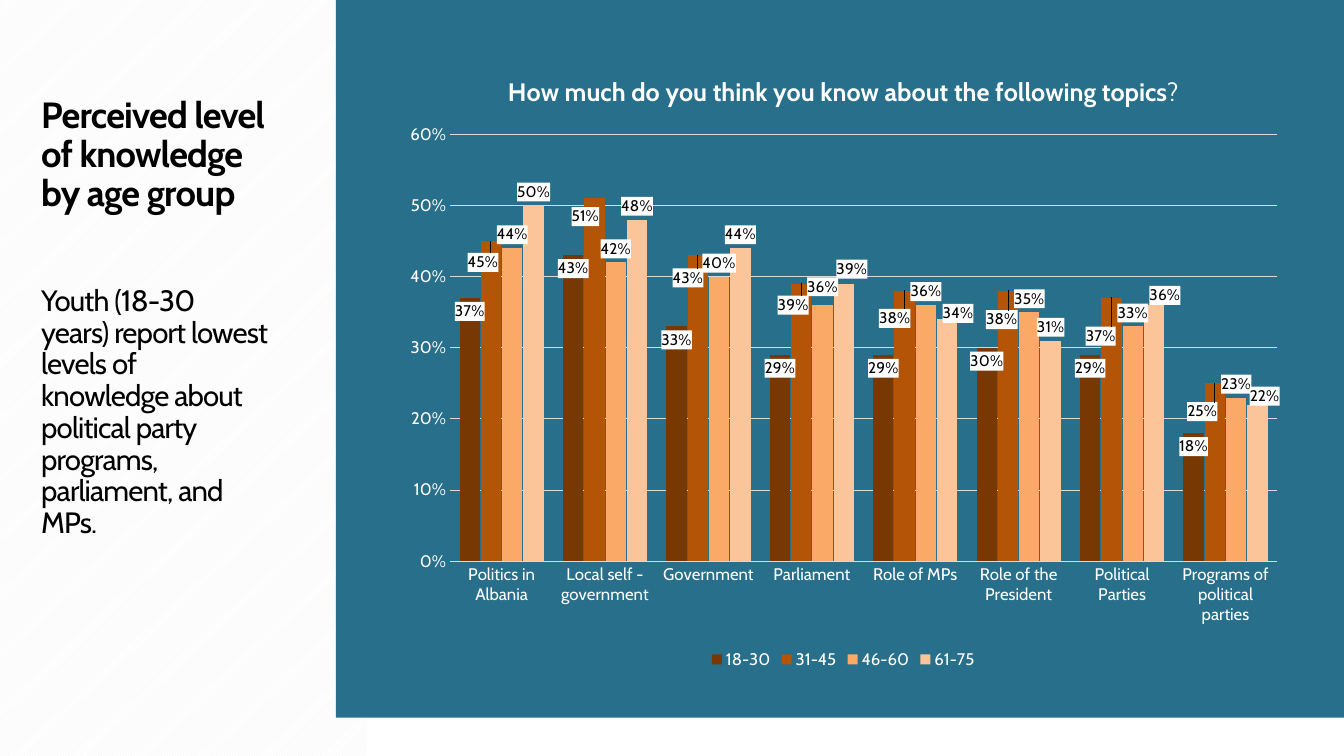
from copy import deepcopy
from dataclasses import dataclass, field

from lxml.etree import SubElement
from pptx import Presentation
from pptx.chart.chart import Chart
from pptx.chart.data import CategoryChartData
from pptx.chart.series import BarSeries
from pptx.dml.color import RGBColor
from pptx.enum.chart import XL_CHART_TYPE as ChartType
from pptx.enum.chart import XL_LABEL_POSITION as LabelPosition
from pptx.enum.chart import XL_LEGEND_POSITION as LegendPosition
from pptx.enum.chart import XL_TICK_MARK as TickMark
from pptx.enum.dml import MSO_PATTERN as Pattern
from pptx.enum.shapes import MSO_SHAPE as ShapeKind
from pptx.enum.text import MSO_ANCHOR as Anchor
from pptx.oxml import parse_xml
from pptx.oxml.ns import nsdecls, qn
from pptx.util import Inches, Pt

WIDTH, HEIGHT = Inches(13.33), Inches(7.5)
FONT = "Cabin"
BLACK = RGBColor(0x00, 0x00, 0x00)
WHITE = RGBColor(0xFF, 0xFF, 0xFF)
STRIPE = RGBColor(0xF2, 0xF2, 0xF2)
TEAL = RGBColor(0x27, 0x6F, 0x8B)
GRID = RGBColor(0xD9, 0xD9, 0xD9)
BROWN = RGBColor(0x77, 0x38, 0x04)
RUST = RGBColor(0xB3, 0x54, 0x06)
ORANGE = RGBColor(0xFA, 0xA9, 0x66)
PEACH = RGBColor(0xFC, 0xC5, 0x99)


@dataclass(frozen=True)
class Frame:
    """Position and size in percent of the slide."""
    left: float
    top: float
    width: float
    height: float

    def place(self) -> tuple[int, int, int, int]:
        return (int(WIDTH * self.left / 100), int(HEIGHT * self.top / 100),
                int(WIDTH * self.width / 100), int(HEIGHT * self.height / 100))


@dataclass(frozen=True)
class AgeGroup:
    """Values and label shifts in percent, shifts being shares of the chart."""
    name: str
    values: tuple[int, ...]
    color: RGBColor
    position: LabelPosition
    shifts: dict[int, tuple[float, float]] = field(default_factory=dict)


@dataclass(frozen=True)
class Passage:
    text: str
    size: int
    bold: bool
    before: int


STRIPES = Frame(-14.48, 25.73, 56.25, 48.53)
PANEL = Frame(25, 0, 75, 94.93)
SIDEBAR = Frame(2.33, 12.13, 18.3, 70.13)
CHART = Frame(29.18, 7.2, 67.13, 81.87)
PLOT = {"x": 0.064, "y": 0.129, "w": 0.917, "h": 0.69}

PASSAGES = (
    Passage("Perceived level of knowledge by age group", 26, True, 0),
    Passage("Youth (18-30 years) report lowest levels of knowledge about "
            "political party programs, parliament, and MPs.", 21, False, 51),
)
TOPICS = ("Politics in Albania", "Local self - government", "Government",
          "Parliament", "Role of MPs", "Role of the President",
          "Political Parties", "Programs of political parties")
AGE_GROUPS = (
    AgeGroup("18-30", (37, 43, 33, 29, 29, 30, 29, 18), BROWN,
             LabelPosition.INSIDE_END),
    AgeGroup("31-45", (45, 51, 43, 39, 38, 38, 37, 25), RUST,
             LabelPosition.INSIDE_END,
             {0: (-0.9, 1.3), 1: (-1, 0.8), 2: (-1.1, 1.5), 3: (-0.9, 1.3),
              4: (-1.1, 2.3), 5: (-0.7, 2.5), 6: (-1.2, 4), 7: (-1.4, 2.4)}),
    AgeGroup("46-60", (44, 42, 40, 36, 36, 35, 33, 23), ORANGE,
             LabelPosition.OUTSIDE_END, {3: (0, -0.8)}),
    AgeGroup("61-75", (50, 48, 44, 39, 34, 31, 36, 22), PEACH,
             LabelPosition.OUTSIDE_END,
             {3: (0.9, -0.2), 4: (1.2, 1.2), 6: (1.2, 0.6), 7: (0.8, 0.8)}),
)


def style(font, size: int, color: RGBColor, bold: bool = False) -> None:
    font.name, font.size, font.bold = FONT, Pt(size), bold
    font.color.rgb = color


def add_block(page, frame: Frame):
    block = page.shapes.add_shape(ShapeKind.RECTANGLE, *frame.place())
    block.shadow.inherit = False
    block.line.fill.background()
    return block


def add_backdrop(page) -> None:
    stripes = add_block(page, STRIPES)
    stripes.rotation = 270
    stripes.fill.patterned()
    stripes.fill.pattern = Pattern.DARK_UPWARD_DIAGONAL
    stripes.fill.fore_color.rgb = STRIPE
    stripes.fill.back_color.rgb = WHITE
    panel = add_block(page, PANEL)
    panel.fill.solid()
    panel.fill.fore_color.rgb = TEAL


def add_sidebar(page) -> None:
    frame = page.shapes.add_textbox(*SIDEBAR.place()).text_frame
    frame.word_wrap = True
    frame.vertical_anchor = Anchor.TOP
    for index, passage in enumerate(PASSAGES):
        para = frame.add_paragraph() if index else frame.paragraphs[0]
        para.text = passage.text
        para.line_spacing = 0.9
        para.space_before = Pt(passage.before)
        style(para.font, passage.size, BLACK, passage.bold)
        para._p.pPr.find(qn("a:defRPr")).set("spc", "-60")


def make_layout(**settings: object):
    layout = parse_xml(f"<c:layout {nsdecls('c')}><c:manualLayout/></c:layout>")
    for name, value in settings.items():
        SubElement(layout[0], qn(f"c:{name}")).set("val", str(value))
    return layout


def label_series(series: BarSeries, group: AgeGroup) -> None:
    labels = series.data_labels
    labels.show_value = True
    labels.number_format, labels.number_format_is_linked = "0%", False
    labels.position = group.position
    style(labels.font, 11, BLACK)
    element = series._element.find(qn("c:dLbls"))
    element.find(qn("c:numFmt")).addnext(parse_xml(
        f"<c:spPr {nsdecls('c', 'a')}><a:solidFill><a:srgbClr val='{WHITE}'/>"
        "</a:solidFill><a:ln><a:noFill/></a:ln></c:spPr>"))
    shared = [part for part in element if part.tag != qn("c:showLeaderLines")]
    for order, (index, (across, down)) in enumerate(group.shifts.items()):
        label = parse_xml(f"<c:dLbl {nsdecls('c')}><c:idx val='{index}'/></c:dLbl>")
        label.append(make_layout(x=across / 100, y=down / 100))
        label.extend(deepcopy(part) for part in shared)
        element.insert(order, label)


def style_axes(chart: Chart) -> None:
    topics, shares = chart.category_axis, chart.value_axis
    for axis in (topics, shares):
        axis.major_tick_mark = axis.minor_tick_mark = TickMark.NONE
        style(axis.tick_labels.font, 12, WHITE)
    shares.minimum_scale, shares.maximum_scale, shares.major_unit = 0, 0.6, 0.1
    shares.tick_labels.number_format = "0%"
    shares.tick_labels.number_format_is_linked = False
    shares.format.line.fill.background()
    shares.has_major_gridlines = True
    for line in (topics.format.line, shares.major_gridlines.format.line):
        line.color.rgb = GRID
        line.width = Pt(0.75)


def add_topic_chart(page) -> None:
    data = CategoryChartData(number_format="0%")
    data.categories = TOPICS
    for group in AGE_GROUPS:
        data.add_series(group.name, [value / 100 for value in group.values])
    chart = page.shapes.add_chart(
        ChartType.COLUMN_CLUSTERED, *CHART.place(), data).chart
    style(chart.font, 10, WHITE)
    para = chart.chart_title.text_frame.paragraphs[0]
    for text, bold in (("How much do you think you know about the following topics", True),
                       ("?", False)):
        span = para.add_run()
        span.text = text
        style(span.font, 18, WHITE, bold)
    chart.has_legend = True
    chart.legend.position = LegendPosition.BOTTOM
    chart.legend.include_in_layout = False
    style(chart.legend.font, 12, WHITE)
    style_axes(chart)
    plot = chart.plots[0]
    plot.gap_width, plot.overlap, plot.vary_by_categories = 95, -5, False
    for series, group in zip(plot.series, AGE_GROUPS):
        series.format.fill.solid()
        series.format.fill.fore_color.rgb = group.color
        label_series(series, group)
    area = chart._chartSpace.chart.plotArea
    for layout in area.findall(qn("c:layout")):
        area.remove(layout)
    area.insert(0, make_layout(layoutTarget="inner", xMode="edge", yMode="edge", **PLOT))


def main() -> None:
    deck = Presentation()
    deck.slide_width, deck.slide_height = WIDTH, HEIGHT
    page = deck.slides.add_slide(deck.slide_layouts[6])
    add_backdrop(page)
    add_sidebar(page)
    add_topic_chart(page)
    deck.save("out.pptx")


if __name__ == "__main__":
    main()
